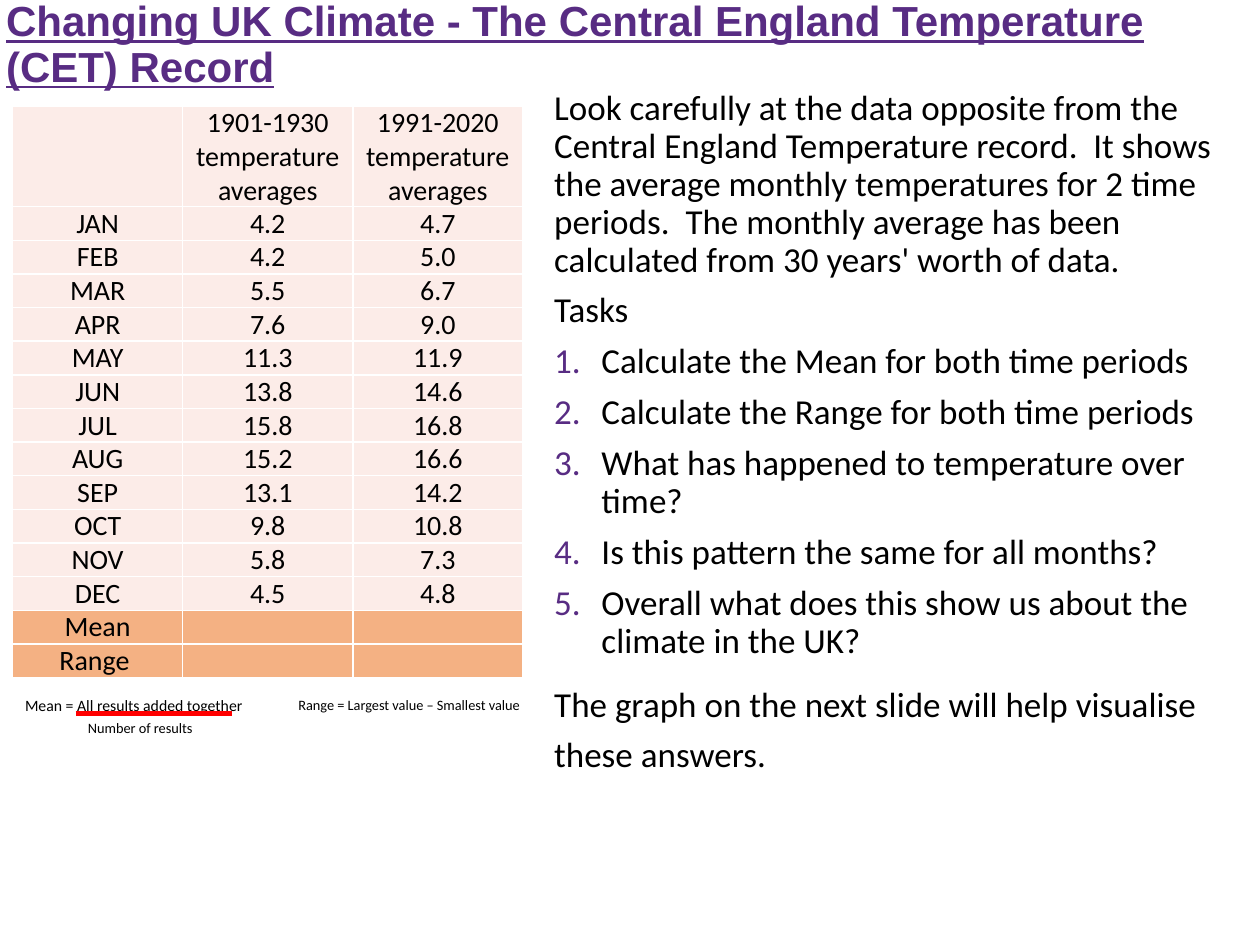
"""Build the Central England Temperature record slide."""
import pptx
import pptx.util
import pptx.dml.color
import pptx.enum.shapes
import pptx.enum.text
import pptx.oxml.ns
from lxml import etree

Pt = pptx.util.Pt
ANCHOR = pptx.enum.text.MSO_ANCHOR
PURPLE, BLACK, WHITE, RED = "582C83", "000000", "FFFFFF", "FF0000"
PINK, ORANGE = "FCECE8", "F4B183"

TITLE = "Changing UK Climate - The Central England Temperature (CET) Record"
INTRO = [
    "Look carefully at the data opposite from the Central England Temperature record.  "
    "It shows the average monthly temperatures for 2 time periods.  "
    "The monthly average has been calculated from 30 years' worth of data.",
    "Tasks",
]
TASKS = [
    "Calculate the Mean for both time periods",
    "Calculate the Range for both time periods",
    "What has happened to temperature over time?",
    "Is this pattern the same for all months?",
    "Overall what does this show us about the climate in the UK?",
]
CLOSING = "The graph on the next slide will help visualise these answers."
HEADER = ("", "1901-1930 temperature averages", "1991-2020 temperature averages")
MONTHS = [
    ("JAN", "4.2", "4.7"),
    ("FEB", "4.2", "5.0"),
    ("MAR", "5.5", "6.7"),
    ("APR", "7.6", "9.0"),
    ("MAY", "11.3", "11.9"),
    ("JUN", "13.8", "14.6"),
    ("JUL", "15.8", "16.8"),
    ("AUG", "15.2", "16.6"),
    ("SEP", "13.1", "14.2"),
    ("OCT", "9.8", "10.8"),
    ("NOV", "5.8", "7.3"),
    ("DEC", "4.5", "4.8"),
]
ANSWERS = [("Mean", "", ""), ("Range ", "", "")]
NOTES = [
    ("Mean = All results added together", 9, 7.2, 393.84, 145.44, 18),
    ("Number of results", 8.2, 43.2, 407.52, 84.24, 17.28),
    ("Range = Largest value – Smallest value", 8.2, 163.44, 394.56, 145.44, 17.28),
]


def color(value):
    return pptx.dml.color.RGBColor.from_string(value)


def sub(parent, tag, **attrs):
    return etree.SubElement(parent, pptx.oxml.ns.qn(tag), attrs)


def add_run(p, text, size, font="Calibri", rgb=BLACK):
    r = p.add_run()
    r.text = text
    r.font.size, r.font.name = Pt(size), font
    r.font.color.rgb = color(rgb)
    return r


def add_box(s, left, top, width, height):
    tf = s.shapes.add_textbox(Pt(left), Pt(top), Pt(width), Pt(height)).text_frame
    tf.word_wrap = True
    return tf


def add_title(s):
    tf = add_box(s, -3.6, 0, 673.92, 52.56)
    tf.vertical_anchor = ANCHOR.MIDDLE
    p = tf.paragraphs[0]
    p.line_spacing = 0.9
    r = add_run(p, TITLE, 24, "Arial", PURPLE)
    r.font.bold = r.font.underline = True


def add_number(p):
    pPr = p._p.get_or_add_pPr()
    pPr.set("marL", str(Pt(27)))
    pPr.set("indent", str(Pt(-27)))
    sub(sub(pPr, "a:buClr"), "a:srgbClr", val=PURPLE)
    sub(pPr, "a:buFont", typeface="+mj-lt")
    sub(pPr, "a:buAutoNum", type="arabicPeriod")


def add_body(s):
    tf = add_box(s, 309.6, 48.24, 395.28, 450.72)
    for i, text in enumerate(INTRO + TASKS + [CLOSING]):
        p = tf.add_paragraph() if i else tf.paragraphs[0]
        p.line_spacing = 1.2 if text == CLOSING else 0.9
        p.space_before = Pt(7.5 if i else 0)
        if text in TASKS:
            add_number(p)
        add_run(p, text, 20)


def fill_cell(cell, text, fill):
    cell.margin_left = cell.margin_right = cell.margin_top = cell.margin_bottom = 0
    cell.vertical_anchor = ANCHOR.BOTTOM
    p = cell.text_frame.paragraphs[0]
    p.alignment = pptx.enum.text.PP_ALIGN.CENTER
    if text:
        add_run(p, text, 16)
    else:
        sub(p._p, "a:endParaRPr", sz="1600")
    tcPr = cell._tc.get_or_add_tcPr()
    for side in ("a:lnL", "a:lnR", "a:lnT", "a:lnB"):
        ln = sub(tcPr, side, w=str(Pt(1)))
        sub(sub(ln, "a:solidFill"), "a:srgbClr", val=WHITE)
    cell.fill.solid()
    cell.fill.fore_color.rgb = color(fill)


def add_temperatures(s):
    rows = [HEADER] + MONTHS + ANSWERS
    frame = s.shapes.add_table(len(rows), len(HEADER), Pt(7.2), Pt(60.48), Pt(291.6), Pt(329.76))
    table = frame.table
    table.first_row = table.horz_banding = False
    for column in table.columns:
        column.width = Pt(97.2)
    for i, values in enumerate(rows):
        table.rows[i].height = Pt(15.84 if i else 43.2)
        for j, text in enumerate(values):
            fill_cell(table.cell(i, j), text, ORANGE if values in ANSWERS else PINK)


def add_notes(s):
    for text, size, *place in NOTES:
        add_run(add_box(s, *place).paragraphs[0], text, size)
    line = s.shapes.add_connector(
        pptx.enum.shapes.MSO_CONNECTOR.STRAIGHT, Pt(43.2), Pt(407.52), Pt(132.48), Pt(407.52))
    line.line.color.rgb = color(RED)
    line.line.width = Pt(3)
    sub(line._element.spPr, "a:effectLst")


def main():
    prs = pptx.Presentation()
    prs.slide_width, prs.slide_height = Pt(720), Pt(540)
    s = prs.slides.add_slide(prs.slide_layouts[6])
    add_title(s)
    add_body(s)
    add_notes(s)
    add_temperatures(s)
    prs.save("out.pptx")


if __name__ == "__main__":
    main()
